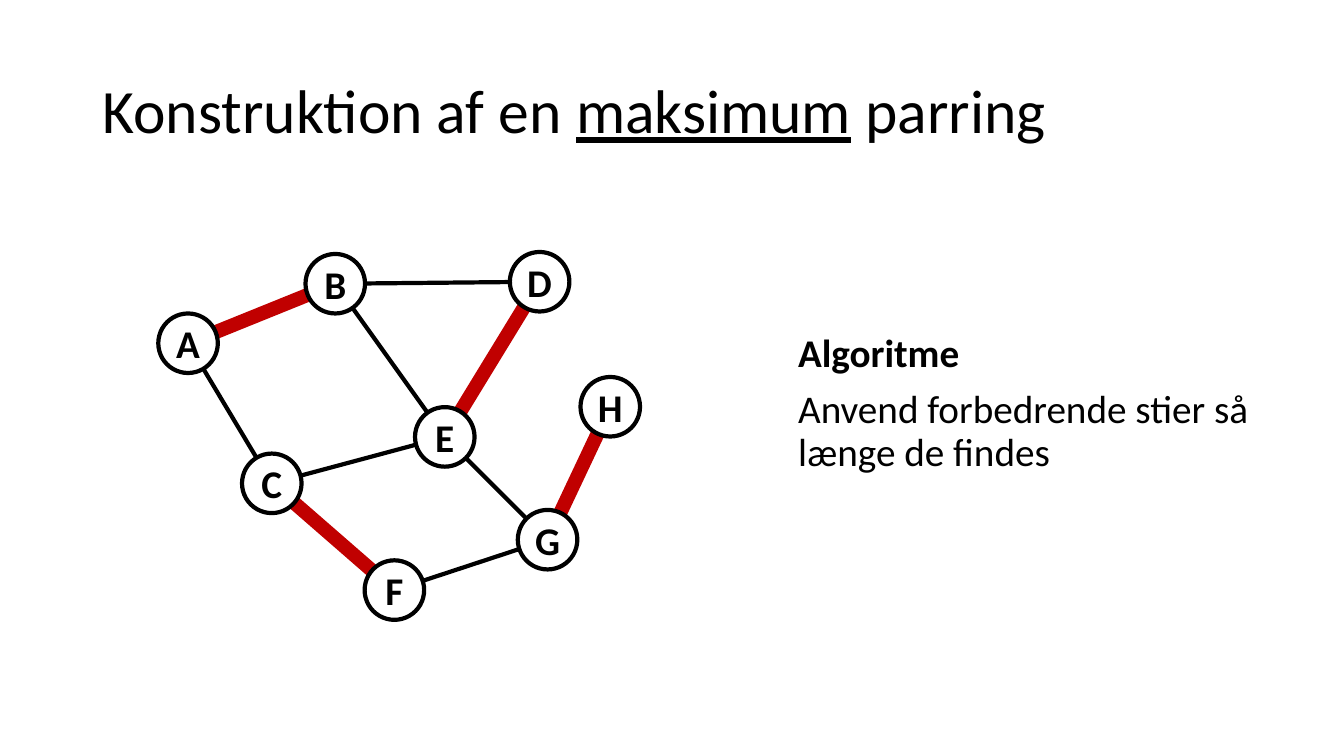
"""Builds a slide on constructing a maximum matching in a graph."""
from lxml import etree
from pptx import Presentation
from pptx.dml.color import RGBColor
from pptx.enum.shapes import MSO_CONNECTOR, MSO_SHAPE
from pptx.enum.text import MSO_ANCHOR, MSO_AUTO_SIZE, PP_ALIGN
from pptx.oxml.ns import qn
from pptx.util import Cm, Pt

LINE, OVAL = MSO_CONNECTOR.STRAIGHT, MSO_SHAPE.OVAL
LEFT, CENTER = PP_ALIGN.LEFT, PP_ALIGN.CENTER
TOP, MIDDLE = MSO_ANCHOR.TOP, MSO_ANCHOR.MIDDLE
NO_FIT = MSO_AUTO_SIZE.NONE

COLORS = {"ink": "000000", "paper": "FFFFFF", "match": "C00000"}
SIZE = 1.5
NODES = {
    "A": (4.74, 8.65), "B": (8.45, 7.15), "C": (6.85, 12.18),
    "D": (13.6, 7.1), "E": (11.21, 11.01), "F": (9.94, 14.87),
    "G": (13.8, 13.6), "H": (15.38, 10.25),
}
EDGES = ["EC", "CA", "EB", "DB", "ED", "GH", "CF", "GF", "GE", "AB"]
PAIRS = ["AB", "ED", "CF", "GH"]

TITLE = [("Konstruktion af en ", {}), ("maksimum", {"underline": True}),
         (" parring", {})]
BODY = [[("Algoritme", {"bold": True})],
        [("Anvend forbedrende stier så længe de findes", {})]]


def color(name):
    """Return the named colour."""
    return RGBColor.from_string(COLORS[name])


def apply(item, values):
    """Set each attribute of the item from the dict."""
    for name, value in values.items():
        setattr(item, name, value)


def write(para, runs, size, **layout):
    """Fill a paragraph with formatted runs."""
    apply(para, layout)
    for text, style in runs:
        run = para.add_run()
        run.text = text
        apply(run.font, {"name": "Calibri", "size": Pt(size), **style})
        run.font.color.rgb = color("ink")


def place(holder, box, anchor):
    """Move a placeholder and return its text frame."""
    names = ("left", "top", "width", "height")
    apply(holder, dict(zip(names, map(Cm, box))))
    frame = holder.text_frame
    apply(frame, {"auto_size": NO_FIT, "word_wrap": True,
                  "vertical_anchor": anchor})
    return frame


def add_title(slide):
    """Write the title with its underlined word."""
    frame = place(slide.shapes.title, (2.33, 1.02, 29.21, 3.68), MIDDLE)
    write(frame.paragraphs[0], TITLE, 44, alignment=LEFT, line_spacing=0.9)


def add_body(slide):
    """Write the algorithm text without bullets."""
    frame = place(slide.placeholders[1], (19.86, 8.28, 13.13, 5.21), TOP)
    for index, runs in enumerate(BODY):
        para = frame.add_paragraph() if index else frame.paragraphs[0]
        write(para, runs, 28, alignment=LEFT, line_spacing=0.9,
              space_before=Pt(10))
        props = para._p.get_or_add_pPr()
        props.set("marL", "0")
        props.set("indent", "0")
        etree.SubElement(props, qn("a:buNone"))


def add_edge(graph, ends, tint, width):
    """Draw a line between two node centres."""
    start, end = (NODES[name] for name in ends)
    edge = graph.shapes.add_connector(LINE, *map(Cm, start + end))
    edge.line.color.rgb = color(tint)
    edge.line.width = Pt(width)
    etree.SubElement(edge._element.spPr, qn("a:effectLst"))


def add_node(graph, name):
    """Draw a lettered circle around its centre."""
    x, y = NODES[name]
    node = graph.shapes.add_shape(OVAL, Cm(x - SIZE / 2), Cm(y - SIZE / 2),
                                  Cm(SIZE), Cm(SIZE))
    node.shadow.inherit = False
    node.fill.solid()
    node.fill.fore_color.rgb = color("paper")
    node.line.color.rgb = color("ink")
    node.line.width = Pt(3)
    frame = node.text_frame
    apply(frame, {"word_wrap": False, "vertical_anchor": MIDDLE})
    write(frame.paragraphs[0], [(name, {"bold": True})], 28,
          alignment=CENTER)


def add_graph(slide):
    """Draw all edges, then the matching, then the nodes."""
    graph = slide.shapes.add_group_shape()
    for ends in EDGES:
        add_edge(graph, ends, "ink", 3)
    for ends in PAIRS:
        add_edge(graph, ends, "match", 10)
    for name in NODES:
        add_node(graph, name)


def main():
    """Build and save the slide."""
    deck = Presentation()
    apply(deck, {"slide_width": Cm(33.87), "slide_height": Cm(19.05)})
    slide = deck.slides.add_slide(deck.slide_layouts[1])
    add_title(slide)
    add_body(slide)
    add_graph(slide)
    deck.save("out.pptx")


if __name__ == "__main__":
    main()
